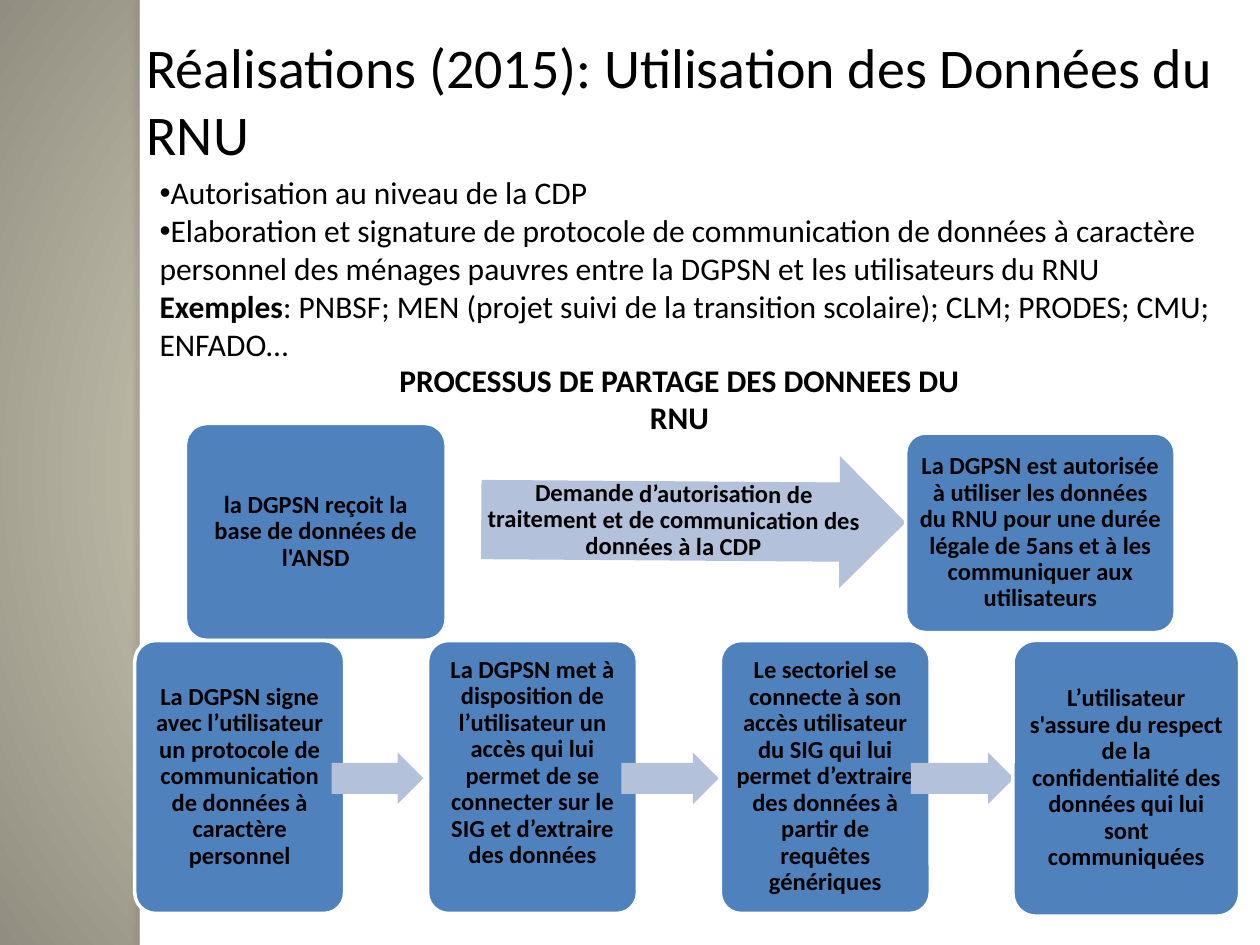
from lxml import etree
from pptx import Presentation
from pptx.dml.color import RGBColor
from pptx.enum.shapes import MSO_SHAPE
from pptx.enum.text import MSO_ANCHOR, MSO_AUTO_SIZE, PP_ALIGN
from pptx.oxml import parse_xml
from pptx.oxml.ns import qn
from pptx.util import Pt

RECT = MSO_SHAPE.RECTANGLE
ROUND = MSO_SHAPE.ROUNDED_RECTANGLE
ARROW = MSO_SHAPE.RIGHT_ARROW
TOP, MID = MSO_ANCHOR.TOP, MSO_ANCHOR.MIDDLE
LEFT, CENTER = PP_ALIGN.LEFT, PP_ALIGN.CENTER
FIXED = MSO_AUTO_SIZE.NONE
FONT = "Calibri"
NS = "http://schemas.openxmlformats.org/drawingml/2006/main"

HUES = {"white": "FFFFFF", "black": "000000", "box": "4F81BD",
        "arrow": "B3C1DB", "core": "FCF7DD", "edge": "918E81",
        "shade": "77756F"}

TITLE = "Réalisations (2015): Utilisation des Données du RNU"
HEAD = "PROCESSUS DE PARTAGE DES DONNEES DU RNU"
ITEMS = [
    "Autorisation au niveau de la CDP",
    "Elaboration et signature de protocole de communication de données "
    "à caractère personnel des ménages pauvres entre la DGPSN et les "
    "utilisateurs du RNU",
]
LABEL = "Exemples"
CASES = (": PNBSF; MEN (projet suivi de la transition scolaire); CLM; "
         "PRODES; CMU; ENFADO…")
START = "la DGPSN reçoit la base de données de l'ANSD"
ASK = ("Demande d’autorisation de traitement et de communication des "
       "données à la CDP")
GRANT = ("La DGPSN est autorisée à utiliser les données du RNU pour une "
         "durée légale de 5ans et à les communiquer aux utilisateurs")
STEPS = [
    ("La DGPSN signe avec l’utilisateur un protocole de communication de "
     "données à caractère personnel", 120, 156, 0),
    ("La DGPSN met à disposition de l’utilisateur un accès qui lui permet "
     "de se connecter sur le SIG et d’extraire des données", 120, 156, 16),
    ("Le sectoriel se connecte à son accès utilisateur du SIG qui lui "
     "permet d’extraire des données à partir de requêtes génériques",
     120, 156, 0),
    ("L’utilisateur s'assure du respect de la confidentialité des données "
     "qui lui sont communiquées", 129.5, 157.5, 0),
]


def hue(name):
    return RGBColor.from_string(HUES[name])


def style(par, size, bold=False, align=LEFT, gap=1.0):
    par.alignment = align
    par.line_spacing = gap
    par.space_before = Pt(0)
    for run in par.runs:
        run.font.name = FONT
        run.font.size = Pt(size)
        run.font.bold = bold
        run.font.color.rgb = hue("black")


def place(item, x, y, w, h):
    item.left, item.top = Pt(x), Pt(y)
    item.width, item.height = Pt(w), Pt(h)


def shape(slide, kind, area, fill, line=None):
    item = slide.shapes.add_shape(kind, *map(Pt, area))
    item.shadow.inherit = False
    item.fill.solid()
    item.fill.fore_color.rgb = hue(fill)
    if line:
        item.line.color.rgb = hue(line)
        item.line.width = Pt(2)
    else:
        item.line.fill.background()
    return item


def label(item, text, inset, lift=0):
    frame = item.text_frame
    frame.word_wrap = True
    frame.vertical_anchor = MID
    frame.margin_left = frame.margin_right = frame.margin_top = Pt(inset)
    frame.margin_bottom = Pt(inset + lift)
    frame.text = text
    style(frame.paragraphs[0], 14, True, CENTER, 0.9)


def box(slide, text, area, lift=0):
    item = shape(slide, ROUND, area, "box", "white")
    item.adjustments[0] = 0.1
    label(item, text, 4.5, lift)


def arrow(slide, area):
    item = shape(slide, ARROW, area, "arrow")
    item.adjustments[0] = 0.6
    item.adjustments[1] = 0.5
    return item


def backdrop(slide):
    fill = slide.background.fill
    fill.gradient()
    for stop, name in zip(fill.gradient_stops, ("core", "edge")):
        stop.color.rgb = hue(name)
    grad = slide.background._cSld.find(".//" + qn("a:gradFill"))
    line = grad.find(qn("a:lin"))
    ring = parse_xml(
        f'<a:path xmlns:a="{NS}" path="circle"><a:fillToRect l="50000" '
        't="50000" r="50000" b="50000"/></a:path>')
    grad.replace(line, ring)
    strip = shape(slide, RECT, (80, 0, 6, 540), "white")
    glow = strip._element.spPr.find(qn("a:effectLst"))
    glow.append(parse_xml(
        f'<a:outerShdw xmlns:a="{NS}" blurRad="38100" dist="38100" '
        f'dir="10800000"><a:srgbClr val="{HUES["shade"]}">'
        '<a:alpha val="25000"/></a:srgbClr></a:outerShdw>'))
    shape(slide, RECT, (80, 0, 640, 540), "white")


def bullet(par, sign=None):
    props = par._p.get_or_add_pPr()
    props.set("marL", "0")
    props.set("indent", "0")
    mark = etree.SubElement(props, qn("a:buChar" if sign else "a:buNone"))
    if sign:
        mark.set("char", sign)


def holder(slide, item, area):
    slide.shapes._spTree.append(item._element)
    place(item, *area)
    frame = item.text_frame
    frame.auto_size = FIXED
    frame.word_wrap = True
    frame.vertical_anchor = TOP
    return frame


def title(slide):
    frame = holder(slide, slide.shapes.title, (76.5, 15, 641, 90))
    frame.text = TITLE
    style(frame.paragraphs[0], 32)


def body(slide):
    frame = holder(slide, slide.placeholders[1], (84, 95.5, 624, 117))
    frame.text = "\n".join(ITEMS + [LABEL])
    pars = frame.paragraphs
    pars[-1].add_run().text = CASES
    for par in pars:
        style(par, 18)
        bullet(par, None if par is pars[-1] else "•")
    pars[-1].runs[0].font.bold = True


def head(slide):
    frame = slide.shapes.add_textbox(*map(Pt, (214, 202.5, 348.5, 51))).text_frame
    frame.word_wrap = True
    frame.text = HEAD
    style(frame.paragraphs[0], 18, True, CENTER)


def share(slide):
    box(slide, START, (106, 242, 149, 124))
    ask = arrow(slide, (275, 260, 242.5, 75.5))
    ask.rotation = 0.4
    label(ask, ASK, 0)
    box(slide, GRANT, (517.5, 247.5, 154, 114))


def access(slide):
    for i, (text, w, h, lift) in enumerate(STEPS):
        box(slide, text, (77 + 167.3 * i, 366, w, h), lift)
        if i < len(STEPS) - 1:
            arrow(slide, (189.5 + 165.5 * i, 430, 52.5 + 3.2 * i, 29.5))


def main():
    deck = Presentation()
    deck.slide_width, deck.slide_height = Pt(720), Pt(540)
    slide = deck.slides.add_slide(deck.slide_layouts[1])
    backdrop(slide)
    share(slide)
    access(slide)
    title(slide)
    body(slide)
    head(slide)
    deck.save("out.pptx")


if __name__ == "__main__":
    main()
